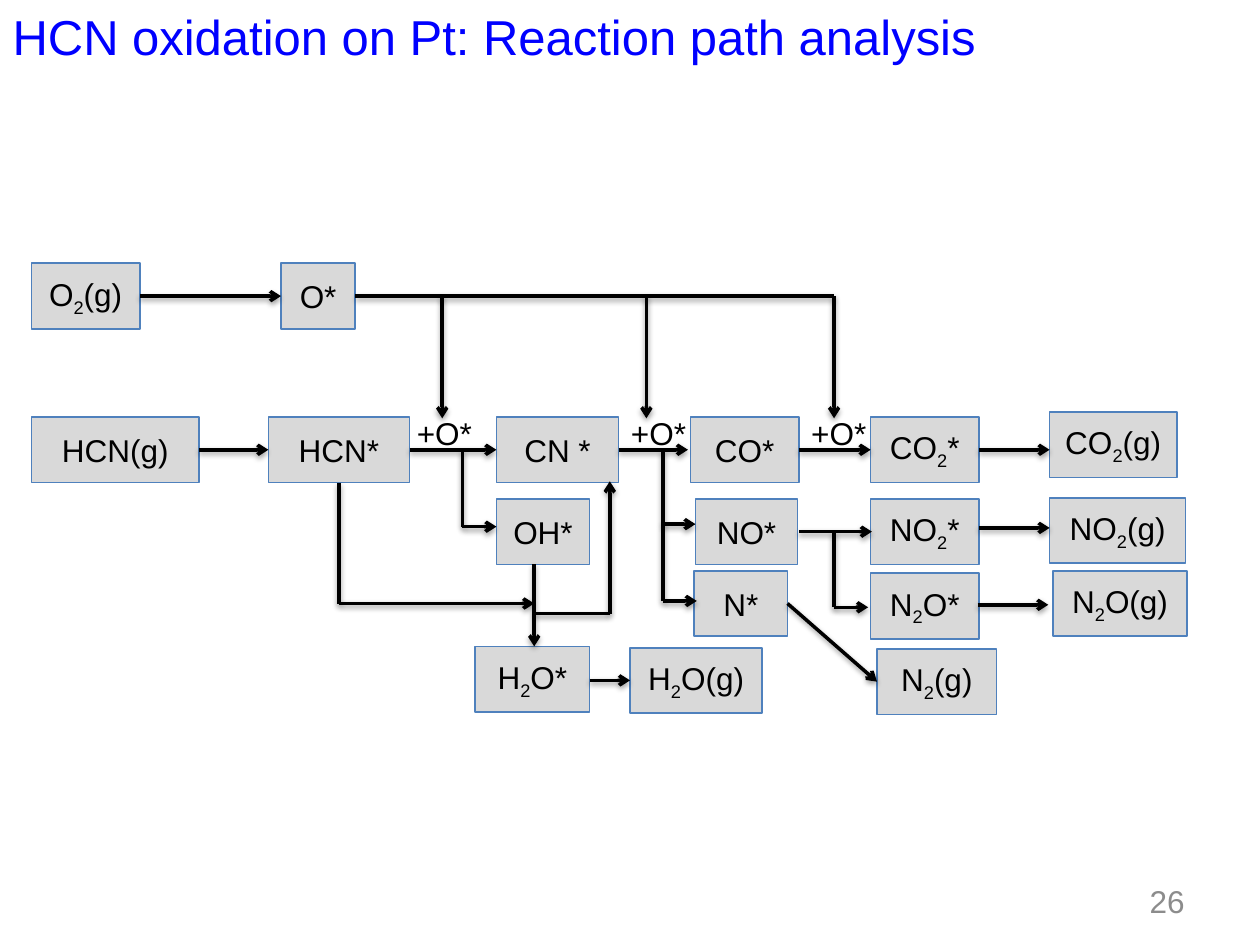
from itertools import groupby, pairwise

from lxml.etree import SubElement
from pptx import Presentation
from pptx.dml.color import RGBColor
from pptx.enum.shapes import MSO_CONNECTOR, MSO_SHAPE
from pptx.enum.text import MSO_ANCHOR, MSO_AUTO_SIZE, PP_ALIGN
from pptx.oxml.ns import qn
from pptx.util import Inches, Pt

COLS, ROWS = 100, 75
HUES = {"ink": "000000", "edge": "4F81BD", "fill": "D9D9D9",
        "head": "0000FF", "page": "8C8C8C"}
HIGH = 5.2

BOXES = [
    ("O2(g)", 2.5, 20.9, 8.6), ("O*", 22.3, 20.9, 5.9),
    ("HCN(g)", 2.5, 33.1, 13.3), ("HCN*", 21.3, 33.1, 11.2),
    ("CN *", 39.4, 33.1, 9.7), ("CO*", 54.8, 33.1, 8.6),
    ("CO2*", 69.1, 33.1, 8.6), ("CO2(g)", 83.3, 32.7, 10.1),
    ("OH*", 39.4, 39.6, 7.4), ("NO*", 55.2, 39.6, 8.1),
    ("NO2*", 69.1, 39.6, 8.6), ("NO2(g)", 83.3, 39.5, 10.8),
    ("N*", 55.1, 45.3, 7.4), ("N2O*", 69.1, 45.5, 8.6),
    ("N2O(g)", 83.6, 45.3, 10.6), ("H2O*", 37.7, 51.3, 9.1),
    ("H2O(g)", 50, 51.4, 10.5), ("N2(g)", 69.6, 51.5, 9.5),
]

LEVEL = [
    (23.5, 11.1, 22.3), (35.7, 15.8, 21.3), (35.7, 32.5, 39.4),
    (35.7, 49.1, 54.6), (35.7, 63.4, 69.1), (35.7, 77.7, 83.3),
    (42.2, 63.4, 69.2), (41.9, 77.7, 83.3), (48, 77.6, 83.2),
    (54, 46.8, 50),
]

BENT = [
    [(36.7, 35.7), (36.7, 41.8), (39.4, 41.8)],
    [(52.6, 35.7), (52.6, 41.6), (55.2, 41.6)],
    [(52.6, 41.6), (52.6, 47.7), (55.3, 47.7)],
    [(66.2, 42.2), (66.2, 48.2), (68.9, 48.2)],
    [(26.9, 38.3), (26.9, 47.9), (42.4, 47.9)],
    [(42.4, 48.7), (48.4, 48.7), (48.4, 38.2)],
    [(42.4, 44.8), (42.4, 51.3)],
    [(62.5, 47.9), (69.6, 54.1)],
]

FEED = [28.2, 35.1, 51.3, 66.2]
ADDED = [32.1, 49.1, 63.4]


class Deck:
    font = "Arial"
    size = 18

    def __init__(self):
        self.prs = Presentation()
        self.prs.slide_width, self.prs.slide_height = Inches(10), Inches(7.5)
        self.slide = self.prs.slides.add_slide(self.prs.slide_layouts[5])

    def x(self, col):
        return round(self.prs.slide_width * col / COLS)

    def y(self, row):
        return round(self.prs.slide_height * row / ROWS)

    def area(self, col, row, wide, high):
        return self.x(col), self.y(row), self.x(wide), self.y(high)

    def hue(self, name):
        return RGBColor.from_string(HUES[name])

    def put(self, frame, runs, hue="ink", size=size,
            align=PP_ALIGN.LEFT, anchor=MSO_ANCHOR.TOP):
        frame.word_wrap = True
        frame.auto_size = MSO_AUTO_SIZE.NONE
        frame.vertical_anchor = anchor
        para = frame.paragraphs[0]
        para.alignment = align
        for text, low in runs:
            run = para.add_run()
            run.text = text
            run.font.name = self.font
            run.font.size = Pt(size)
            run.font.color.rgb = self.hue(hue)
            if low:
                run._r.get_or_add_rPr().set("baseline", "-25000")

    def title(self, text):
        head = self.slide.shapes.title
        head.left, head.top, head.width, head.height = self.area(0, 0, 99.4, 5.7)
        self.put(head.text_frame, [(text, False)], "head", 28)

    def label(self, text, place, **style):
        note = self.slide.shapes.add_textbox(*self.area(*place))
        self.put(note.text_frame, [(text, False)], **style)

    def box(self, name, col, row, wide):
        rect = self.slide.shapes.add_shape(
            MSO_SHAPE.RECTANGLE, *self.area(col, row, wide, HIGH))
        rect.shadow.inherit = False
        rect.fill.solid()
        rect.fill.fore_color.rgb = self.hue("fill")
        rect.line.color.rgb = self.hue("edge")
        rect.line.width = Pt(1)
        runs = [("".join(part), low) for low, part in groupby(name, str.isdigit)]
        self.put(rect.text_frame, runs,
                 align=PP_ALIGN.CENTER, anchor=MSO_ANCHOR.MIDDLE)

    def route(self, points):
        for (ax, ay), (bx, by) in pairwise(points):
            link = self.slide.shapes.add_connector(
                MSO_CONNECTOR.STRAIGHT,
                self.x(ax), self.y(ay), self.x(bx), self.y(by))
            link.line.color.rgb = self.hue("ink")
            link.line.width = Pt(2)
        SubElement(link.line._get_or_add_ln(), qn("a:tailEnd"), type="arrow")


def main():
    deck = Deck()
    deck.title("HCN oxidation on Pt: Reaction path analysis")
    for item in BOXES:
        deck.box(*item)
    for row, start, end in LEVEL:
        deck.route([(start, row), (end, row)])
    for points in BENT:
        deck.route(points)
    for start, end in pairwise(FEED):
        deck.route([(start, 23.5), (end, 23.5), (end, 33.2)])
    for col in ADDED:
        deck.label("+O*", (col, 32.4, 7.6, 4))
    deck.label("26", (71.7, 69.5, 23.3, 4), hue="page",
               align=PP_ALIGN.RIGHT, anchor=MSO_ANCHOR.MIDDLE)
    deck.prs.save("out.pptx")


if __name__ == "__main__":
    main()
